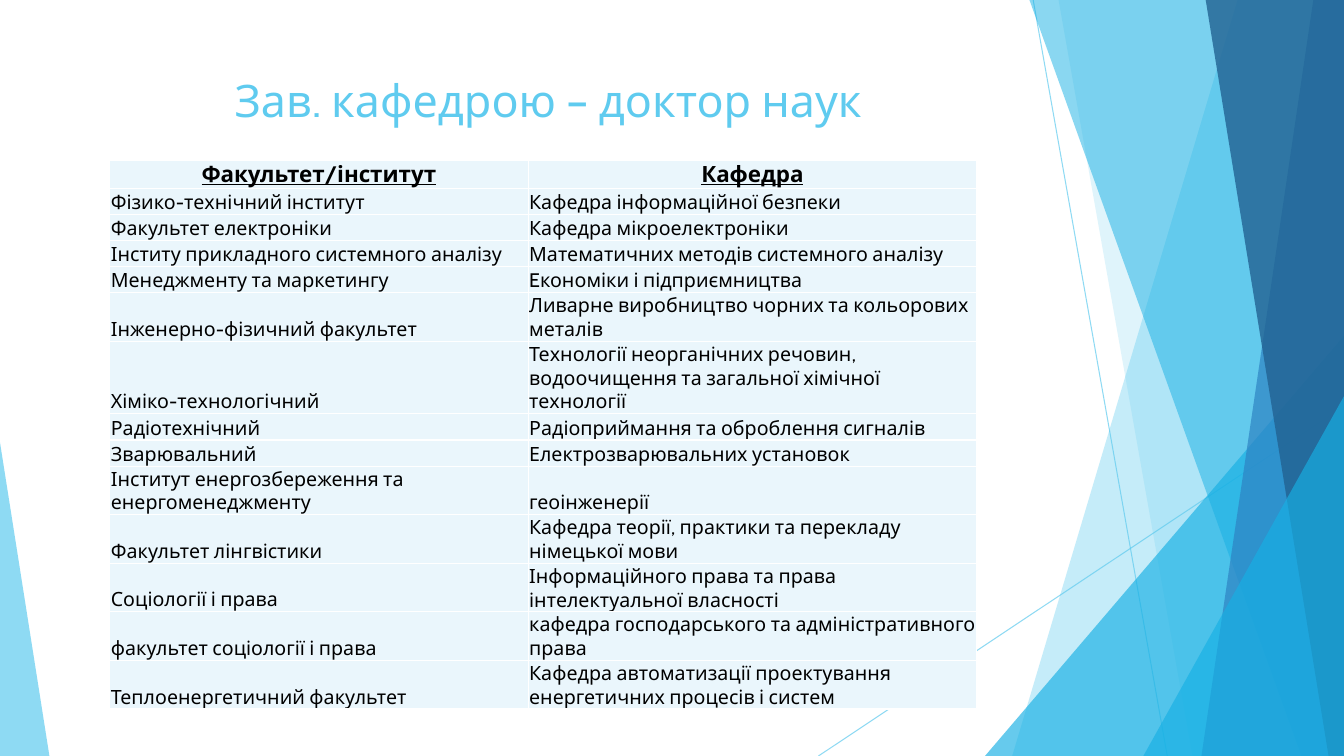
from dataclasses import dataclass

import lxml.etree
import pptx
import pptx.dml.color
import pptx.dml.fill
import pptx.enum.shapes
import pptx.enum.text
import pptx.oxml
import pptx.oxml.ns
import pptx.presentation
import pptx.shapes.base
import pptx.slide
import pptx.table
import pptx.util

Pt = pptx.util.Pt
qn = pptx.oxml.ns.qn
Align = pptx.enum.text.PP_ALIGN
Anchor = pptx.enum.text.MSO_ANCHOR

WIDTH, HEIGHT, BLEED = 960, 540, -0.7
SKY, AZURE, BLUE, NAVY = "5FCBEF", "17B0E4", "2E83C3", "226292"
WHITE, BLACK, PALE = "FFFFFF", "000000", "EAF6FC"
ROW_HEIGHTS = {1: 18.7, 2: 34.7, 3: 51.8}
COLUMN_WIDTHS = (298.8, 320.4)


@dataclass(frozen=True)
class Ray:
    start: tuple[float, float]
    end: tuple[float, float]


@dataclass(frozen=True)
class Band:
    top_x: float
    bottom_x: float
    color: str
    opacity: int


@dataclass(frozen=True)
class Wedge:
    left: float
    top: float
    width: float
    apex: float
    color: str
    opacity: int


@dataclass(frozen=True)
class Department:
    faculty: str
    name: str
    lines: int = 1


RAYS = (Ray((738, 0), (833.8, HEIGHT)), Ray((WIDTH, 290.2), (584.6, HEIGHT)))

FACETS = (
    Band(884.2, 723, SKY, 36),
    Band(756, 851.8, SKY, 20),
    Wedge(703.6, 239.8, 256.4, 1, AZURE, 66),
    Band(735.1, 929.5, AZURE, 50),
    Band(938.2, 858.2, BLUE, 70),
    Band(861.1, 949, NAVY, 80),
    Wedge(816.7, 283, 143.3, 1, AZURE, 66),
    Wedge(0, 316.1, 35.3, 0, SKY, 70),
)

HEADING = Department("Факультет/інститут", "Кафедра")
DEPARTMENTS = (
    Department("Фізико-технічний інститут", "Кафедра інформаційної безпеки"),
    Department("Факультет електроніки", "Кафедра мікроелектроніки"),
    Department("Інститу прикладного системного аналізу", "Математичних методів системного аналізу"),
    Department("Менеджменту та маркетингу", "Eкономіки і підприємництва"),
    Department("Інженерно-фізичний факультет", "Ливарне виробництво чорних та кольорових металів", 2),
    Department(
        "Хіміко-технологічний",
        "Технології неорганічних речовин, водоочищення та загальної хімічної технології",
        3,
    ),
    Department("Радіотехнічний", "Радіоприймання та оброблення сигналів"),
    Department("Зварювальний", "Електрозварювальних установок"),
    Department("Інститут енергозбереження та енергоменеджменту", "геоінженерії", 2),
    Department("Факультет лінгвістики", "Кафедра теорії, практики та перекладу німецької мови", 2),
    Department("Соціології і права", "Інформаційного права та права інтелектуальної власності", 2),
    Department("факультет соціології і права", "кафедра господарського та адміністративного права", 2),
    Department(
        "Теплоенергетичний факультет",
        "Кафедра автоматизації проектування енергетичних процесів і систем",
        2,
    ),
)

TITLE_FORMAT = {"name": "Cabin", "size": Pt(32), "bold": False}
HEADING_FORMAT = {"name": "Cabin", "size": Pt(16), "bold": True, "underline": True}
BODY_FORMAT = {"name": "Cabin", "size": Pt(14), "bold": False, "underline": False}
CELL_FORMAT = {
    "margin_left": Pt(0.7),
    "margin_right": Pt(0.7),
    "margin_top": Pt(0.7),
    "margin_bottom": Pt(0),
    "vertical_anchor": Anchor.BOTTOM,
}


def apply(target: object, values: dict) -> None:
    for name, value in values.items():
        setattr(target, name, value)


def paint(fill: pptx.dml.fill.FillFormat, color: str, opacity: int = 100) -> None:
    fill.solid()
    fill.fore_color.rgb = pptx.dml.color.RGBColor.from_string(color)
    if opacity < 100:
        for tone in fill._xPr.iterfind(f"{qn('a:solidFill')}/{qn('a:srgbClr')}"):
            lxml.etree.SubElement(tone, qn("a:alpha"), val=str(opacity * 1000))


def draw_ray(page: pptx.slide.Slide, ray: Ray) -> None:
    points = [Pt(value) for value in ray.start + ray.end]
    line = page.shapes.add_connector(pptx.enum.shapes.MSO_CONNECTOR.STRAIGHT, *points)
    line.line.width = Pt(0.75)
    paint(line.line.fill, SKY, 70)
    lxml.etree.SubElement(line._element.spPr, qn("a:effectLst"))


def outline_band(page: pptx.slide.Slide, band: Band) -> pptx.shapes.base.BaseShape:
    builder = page.shapes.build_freeform(Pt(band.top_x), Pt(BLEED))
    corners = ((WIDTH, BLEED), (WIDTH, HEIGHT), (band.bottom_x, HEIGHT))
    builder.add_line_segments([(Pt(x), Pt(y)) for x, y in corners], close=True)
    return builder.convert_to_shape()


def outline_wedge(page: pptx.slide.Slide, wedge: Wedge) -> pptx.shapes.base.BaseShape:
    frame = (wedge.left, wedge.top, wedge.width, HEIGHT - wedge.top)
    triangle = pptx.enum.shapes.MSO_SHAPE.ISOSCELES_TRIANGLE
    shape = page.shapes.add_shape(triangle, *map(Pt, frame))
    shape.adjustments[0] = wedge.apex
    return shape


def draw_facet(page: pptx.slide.Slide, facet: Band | Wedge) -> None:
    outline = outline_band if isinstance(facet, Band) else outline_wedge
    shape = outline(page, facet)
    shape.shadow.inherit = False
    shape.line.fill.background()
    paint(shape.fill, facet.color, facet.opacity)


def write(para: object, text: str, style: dict, color: str, align: Align) -> None:
    para.alignment = align
    span = para.add_run()
    span.text = text
    apply(span.font, style)
    paint(span.font.fill, color)


def draw_title(page: pptx.slide.Slide, text: str) -> None:
    box = page.shapes.add_textbox(Pt(53.3), Pt(48.2), Pt(676.8), Pt(58.3))
    apply(box.text_frame, {"word_wrap": True, "vertical_anchor": Anchor.TOP})
    write(box.text_frame.paragraphs[0], text, TITLE_FORMAT, SKY, Align.CENTER)


def border_cell(cell: pptx.table._Cell) -> None:
    properties = cell._tc.get_or_add_tcPr()
    for side in ("lnL", "lnR", "lnT", "lnB"):
        edge = lxml.etree.SubElement(properties, qn(f"a:{side}"), w=str(Pt(1)))
        fill = lxml.etree.SubElement(edge, qn("a:solidFill"))
        lxml.etree.SubElement(fill, qn("a:srgbClr"), val=WHITE)


def draw_table(page: pptx.slide.Slide) -> None:
    entries = (HEADING,) + DEPARTMENTS
    heights = [ROW_HEIGHTS[entry.lines] for entry in entries]
    frame = (78.5, 114.5, sum(COLUMN_WIDTHS), sum(heights))
    table = page.shapes.add_table(len(entries), len(COLUMN_WIDTHS), *map(Pt, frame)).table
    apply(table, {"first_row": False, "horz_banding": False})
    for column, width in zip(table.columns, COLUMN_WIDTHS):
        column.width = Pt(width)
    for row, entry, height in zip(table.rows, entries, heights):
        row.height = Pt(height)
        is_heading = entry is HEADING
        style = HEADING_FORMAT if is_heading else BODY_FORMAT
        align = Align.CENTER if is_heading else Align.LEFT
        for cell, text in zip(row.cells, (entry.faculty, entry.name)):
            apply(cell, CELL_FORMAT)
            border_cell(cell)
            paint(cell.fill, PALE)
            write(cell.text_frame.paragraphs[0], text, style, BLACK, align)


def main() -> None:
    deck = pptx.Presentation()
    apply(deck, {"slide_width": Pt(WIDTH), "slide_height": Pt(HEIGHT)})
    page = deck.slides.add_slide(deck.slide_layouts[6])
    paint(page.background.fill, WHITE)
    for ray in RAYS:
        draw_ray(page, ray)
    for facet in FACETS:
        draw_facet(page, facet)
    draw_title(page, "Зав. кафедрою – доктор наук")
    draw_table(page)
    deck.save("out.pptx")


if __name__ == "__main__":
    main()
